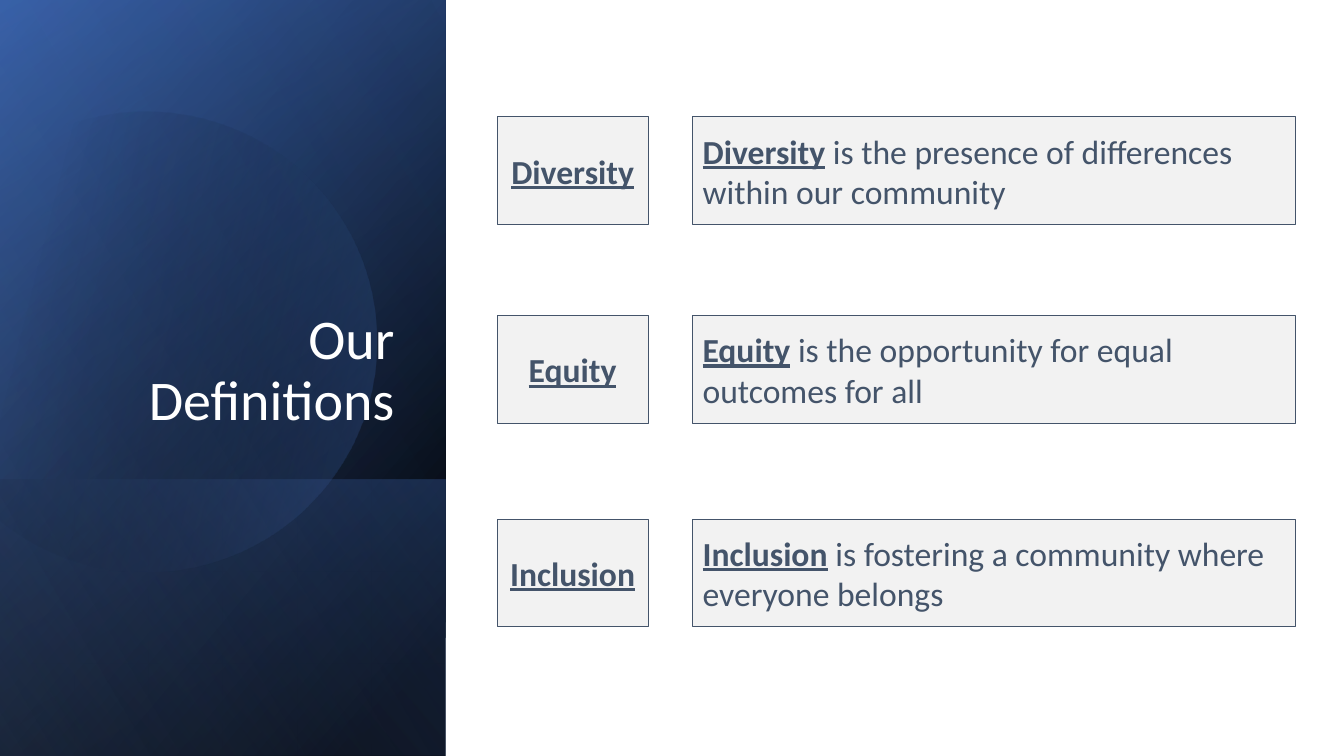
import math

import pptx
import pptx.dml.color
import pptx.enum.shapes
import pptx.enum.text
import pptx.oxml.ns
import pptx.util
from lxml import etree

WIDTH, HEIGHT = 13.33, 7.5
FONT = "Calibri"
INK, BOX, WHITE = "44546A", "F2F2F2", "FFFFFF"

TITLE = "Our Definitions"
DEFINITIONS = [
    ("Diversity", " is the presence of differences within our community"),
    ("Equity", " is the opportunity for equal outcomes for all"),
    ("Inclusion", " is fostering a community where everyone belongs"),
]
ROW_TOPS = [1.16, 3.13, 5.15]
ROW_HEIGHT = 1.07
TERM_COLUMN = (4.93, 1.5)
MEANING_COLUMN = (6.87, 5.98)

# Side panel: (top, height, angle, stops); a stop is (position, colour, opacity), all in percent
PANEL_WIDTH = 4.42
BASE_LAYERS = [
    (0, HEIGHT, 50, [(8, "000000", 100), (100, "2F5597", 100)]),
    (0, HEIGHT, 30, [(0, "000000", 0), (99, "4472C4", 46)]),
    (4.76, 2.74, 130, [(2, "4472C4", 29), (100, "000000", 30)]),
]
DISC_GLOW = (30, [(29, "000000", 0), (100, "4472C4", 43)])
TOP_LAYER = (0, HEIGHT, 120, [(0, "000000", 0), (99, "8FAADC", 11)])

DISC_CENTER, DISC_RADIUS = (1.44, 3.345), 2.285
DISC_ARC = (-118.5, 149.5)
DISC_TURN = 343.9
DISC_STEPS = 90

inch = pptx.util.Inches


def color(hex_value):
    return pptx.dml.color.RGBColor.from_string(hex_value)


def fill_gradient(shape, angle, stops):
    """Two-stop linear fill; angle is clockwise degrees."""
    shape.shadow.inherit = False
    shape.line.fill.background()
    shape.fill.gradient()
    shape.fill.gradient_angle = 360 - angle
    for stop, (position, hex_value, _) in zip(shape.fill.gradient_stops, stops):
        stop.position = position / 100
        stop.color.rgb = color(hex_value)
    tints = shape._element.xpath(".//a:gsLst//a:srgbClr")
    for tint, (_, _, opacity) in zip(tints, stops):
        alpha = etree.SubElement(tint, pptx.oxml.ns.qn("a:alpha"))
        alpha.set("val", str(opacity * 1000))


def add_panel_layer(slide, top, height, angle, stops):
    """Quarter-turned, mirrored rectangle that covers the panel from top down."""
    left = (PANEL_WIDTH - height) / 2
    layer = slide.shapes.add_shape(
        pptx.enum.shapes.MSO_SHAPE.RECTANGLE,
        inch(left), inch(top - left), inch(height), inch(PANEL_WIDTH))
    layer.rotation = 90
    layer._element.spPr.xfrm.set("flipH", "1")
    fill_gradient(layer, angle, stops)


def add_disc(slide):
    start, end = DISC_ARC
    angles = [math.radians(start + (end - start) * step / DISC_STEPS)
              for step in range(DISC_STEPS + 1)]
    rim = [(inch(DISC_CENTER[0] + DISC_RADIUS * math.cos(a)),
            inch(DISC_CENTER[1] + DISC_RADIUS * math.sin(a))) for a in angles]
    builder = slide.shapes.build_freeform(*rim[0])
    builder.add_line_segments(rim[1:], close=True)
    disc = builder.convert_to_shape()
    disc.rotation = DISC_TURN
    fill_gradient(disc, *DISC_GLOW)


def add_run(paragraph, text, size, hex_value, strong=False):
    run = paragraph.add_run()
    run.text = text
    run.font.name = FONT
    run.font.size = pptx.util.Pt(size)
    run.font.color.rgb = color(hex_value)
    run.font.bold = run.font.underline = strong


def add_title(slide):
    frame = slide.shapes.add_textbox(inch(0.51), inch(0.64), inch(3.5), inch(3.7)).text_frame
    frame.word_wrap = True
    frame.vertical_anchor = pptx.enum.text.MSO_ANCHOR.BOTTOM
    paragraph = frame.paragraphs[0]
    paragraph.alignment = pptx.enum.text.PP_ALIGN.RIGHT
    paragraph.line_spacing = 0.9
    add_run(paragraph, TITLE, 40, WHITE)


def add_box(slide, column, top, alignment, term, meaning=""):
    left, width = column
    box = slide.shapes.add_shape(
        pptx.enum.shapes.MSO_SHAPE.RECTANGLE,
        inch(left), inch(top), inch(width), inch(ROW_HEIGHT))
    box.shadow.inherit = False
    box.fill.solid()
    box.fill.fore_color.rgb = color(BOX)
    box.line.color.rgb = color(INK)
    box.line.width = pptx.util.Pt(0.75)
    box.text_frame.word_wrap = True
    box.text_frame.vertical_anchor = pptx.enum.text.MSO_ANCHOR.MIDDLE
    paragraph = box.text_frame.paragraphs[0]
    paragraph.alignment = alignment
    add_run(paragraph, term, 24, INK, strong=True)
    if meaning:
        add_run(paragraph, meaning, 24, INK)


def main():
    deck = pptx.Presentation()
    deck.slide_width, deck.slide_height = inch(WIDTH), inch(HEIGHT)
    slide = deck.slides.add_slide(deck.slide_layouts[6])

    for layer in BASE_LAYERS:
        add_panel_layer(slide, *layer)
    add_disc(slide)
    add_panel_layer(slide, *TOP_LAYER)
    add_title(slide)

    align = pptx.enum.text.PP_ALIGN
    for top, (term, meaning) in zip(ROW_TOPS, DEFINITIONS):
        add_box(slide, TERM_COLUMN, top, align.CENTER, term)
        add_box(slide, MEANING_COLUMN, top, align.LEFT, term, meaning)

    deck.save("out.pptx")


if __name__ == "__main__":
    main()
